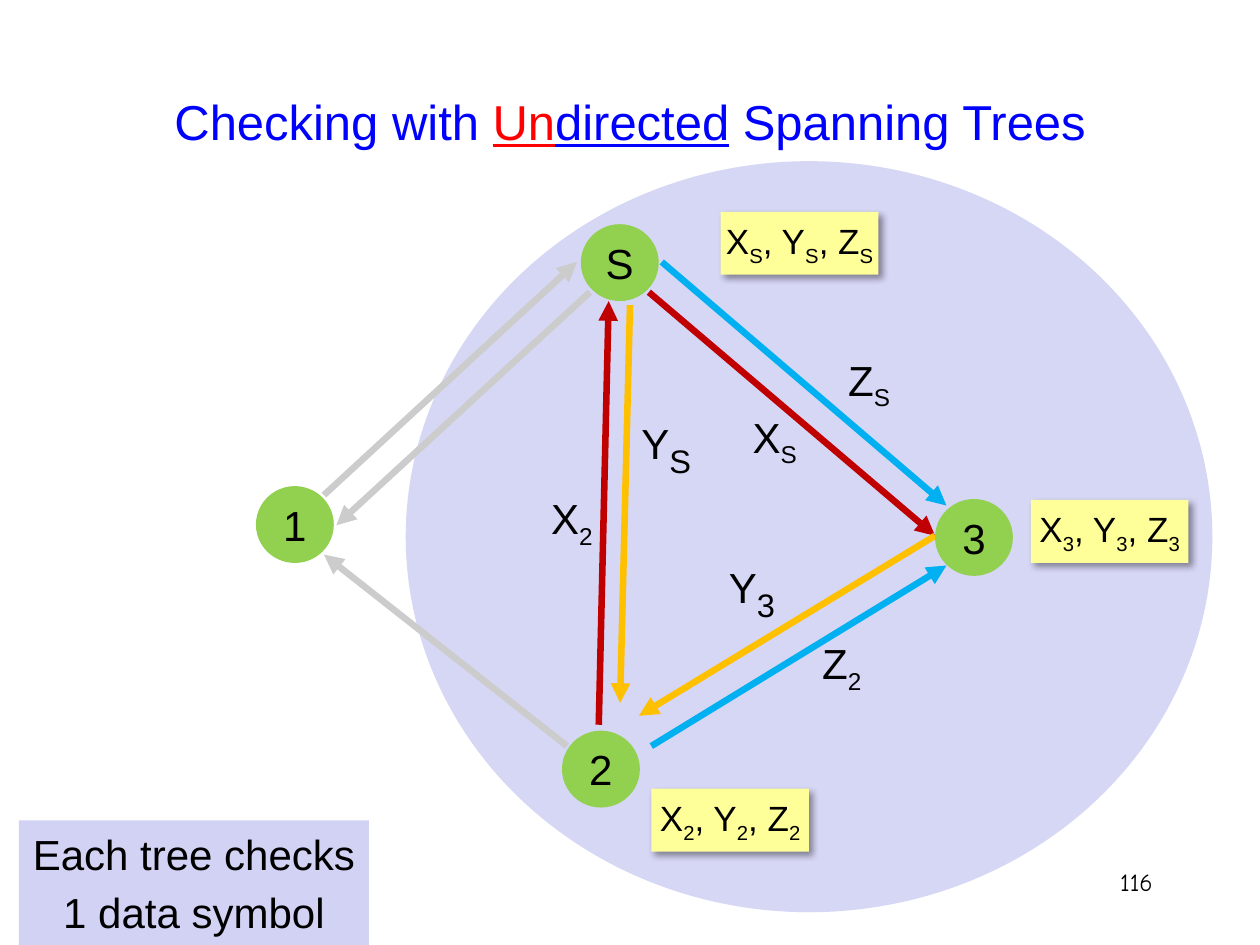
from lxml.etree import SubElement
from pptx import Presentation
from pptx.dml.color import RGBColor
from pptx.enum.shapes import MSO_CONNECTOR as CONN, MSO_SHAPE as SHAPE
from pptx.enum.text import MSO_ANCHOR as ANCHOR, PP_ALIGN as ALIGN
from pptx.oxml.ns import qn
from pptx.util import Cm, Pt

BLACK = RGBColor(0, 0, 0)
BLUE = RGBColor(0x00, 0x00, 0xFF)
RED = RGBColor(0xFF, 0x00, 0x00)
LAVENDER = RGBColor(0xD6, 0xD6, 0xF5)
CAPTION_FILL = RGBColor(0xD2, 0xD2, 0xF4)
GREEN = RGBColor(0x92, 0xD0, 0x50)
CREAM = RGBColor(0xFF, 0xFF, 0x99)
GRAY = RGBColor(0xCC, 0xCC, 0xCC)
X_TREE = RGBColor(0xC0, 0x00, 0x00)
Y_TREE = RGBColor(0xFF, 0xC0, 0x00)
Z_TREE = RGBColor(0x00, 0xB0, 0xF0)


def set_attrs(obj, values):
    for name, value in values.items():
        setattr(obj, name, value)


class Deck:
    """Holds the text style and the current slide; lengths are in cm."""
    font = "Arial"
    frame = {"word_wrap": False, "vertical_anchor": ANCHOR.MIDDLE}

    def __init__(self, prs):
        self.s = prs.slides.add_slide(prs.slide_layouts[5])

    def run(self, p, text, size, color=BLACK, sub=False, **extra):
        r = p.add_run()
        r.text = text
        set_attrs(r.font, {"name": self.font, "size": Pt(size), **extra})
        r.font.color.rgb = color
        if sub:
            r.font._element.set("baseline", "-25000")

    def paragraph(self, tf, first, size):
        p = tf.paragraphs[0] if first else tf.add_paragraph()
        set_attrs(p, {"alignment": ALIGN.CENTER, "space_before": Pt(size * 0.2)})
        return p

    def title(self, box, parts):
        sp = self.s.shapes.title
        set_attrs(sp, dict(zip(("left", "top", "width", "height"), map(Cm, box))))
        tf = sp.text_frame
        tf.vertical_anchor = ANCHOR.MIDDLE
        p = tf.paragraphs[0]
        p.alignment = ALIGN.CENTER
        for text, color, underline in parts:
            self.run(p, text, 28, color, underline=underline)

    def shape(self, kind, box, fill, lines=(), size=24):
        sp = self.s.shapes.add_shape(kind, *map(Cm, box))
        sp.shadow.inherit = False
        sp.fill.solid()
        sp.fill.fore_color.rgb = fill
        sp.line.fill.background()
        set_attrs(sp.text_frame, self.frame)
        for i, text in enumerate(lines):
            self.run(self.paragraph(sp.text_frame, i == 0, size), text, size)
        return sp

    def note(self, x, y, node):
        """Yellow card listing the three symbols held by a node."""
        sp = self.shape(SHAPE.RECTANGLE, (x, y, 3.18, 1.27), CREAM)
        p = self.paragraph(sp.text_frame, True, 20)
        for letter in ("X", ", Y", ", Z"):
            self.run(p, letter, 20)
            self.run(p, node, 20, sub=True)
        effects = sp._element.spPr.find(qn("a:effectLst"))
        shadow = SubElement(effects, qn("a:outerShdw"), blurRad=str(Pt(4)),
                            dist=str(Pt(3)), dir="2700000", rotWithShape="0")
        clr = SubElement(shadow, qn("a:srgbClr"), val=str(BLACK))
        SubElement(clr, qn("a:alpha"), val="40000")

    def label(self, x, y, letter, node, sub_size=24):
        sp = self.s.shapes.add_textbox(*map(Cm, (x, y, 3.4, 1.27)))
        set_attrs(sp.text_frame, self.frame)
        p = self.paragraph(sp.text_frame, True, 24)
        self.run(p, letter, 24)
        self.run(p, node, sub_size, sub=True)

    def arrow(self, start, tip, color):
        c = self.s.shapes.add_connector(CONN.STRAIGHT, *map(Cm, start + tip))
        c.line.color.rgb = color
        c.line.width = Pt(3.75)
        SubElement(c.line._get_or_add_ln(), qn("a:tailEnd"), type="triangle")
        SubElement(c._element.spPr, qn("a:effectLst"))

    def page_number(self, box, text):
        sp = self.s.shapes.add_textbox(*map(Cm, box))
        sp.text_frame.word_wrap = True
        p = sp.text_frame.paragraphs[0]
        p.alignment = ALIGN.RIGHT
        self.run(p, text, 14, name="Comic Neue")


def main():
    prs = Presentation()
    set_attrs(prs, {"slide_width": Cm(25.4), "slide_height": Cm(19.05)})
    deck = Deck(prs)

    # Background group, title and caption
    deck.shape(SHAPE.OVAL, (8.18, 3.25, 16.26, 15.14), LAVENDER)
    deck.title((1.9, 0.84, 21.6, 3.18), [
        ("Checking with ", BLUE, False), ("Un", RED, True),
        ("directed", BLUE, True), (" Spanning Trees", BLUE, False)])
    deck.page_number((18.21, 17.35, 5.28, 1.27), "116")
    deck.shape(SHAPE.RECTANGLE, (0.38, 16.54, 7.06, 2.51), CAPTION_FILL,
               ("Each tree checks", "1 data symbol"))

    # Edges, from start to arrow tip
    for start, tip, color in [
        ((12.07, 14.61), (12.27, 6.07), X_TREE),
        ((11.43, 15.04), (6.53, 11.18), GRAY),
        ((12.7, 6.15), (12.5, 14.17), Y_TREE),
        ((13.08, 5.89), (18.85, 10.8), X_TREE),
        ((13.34, 5.28), (19.08, 10.19), Z_TREE),
        ((18.85, 10.8), (12.88, 14.43), Y_TREE),
        ((11.89, 5.89), (6.78, 10.59), GRAY),
        ((6.53, 9.98), (11.63, 5.28), GRAY),
        ((13.13, 15.04), (19.08, 11.4), Z_TREE),
    ]:
        deck.arrow(start, tip, color)

    # Nodes
    for name, x, y in [("1", 5.16, 9.8), ("3", 18.85, 10.06),
                       ("2", 11.33, 14.73), ("S", 11.71, 4.52)]:
        deck.shape(SHAPE.OVAL, (x, y, 1.57, 1.55), GREEN, (name,))

    # Edge labels
    for label in [(9.83, 9.88, "X", "2"), (11.73, 8.28, "Y", "S", 32),
                  (13.92, 8.23, "X", "S"), (13.46, 11.17, "Y", "3", 32),
                  (15.27, 12.8, "Z", "2"), (15.82, 7.08, "Z", "S")]:
        deck.label(*label)

    # Symbols held by each node
    for note in [(14.53, 4.27, "S"), (13.13, 15.9, "2"), (20.78, 10.08, "3")]:
        deck.note(*note)

    prs.save("out.pptx")


if __name__ == "__main__":
    main()
